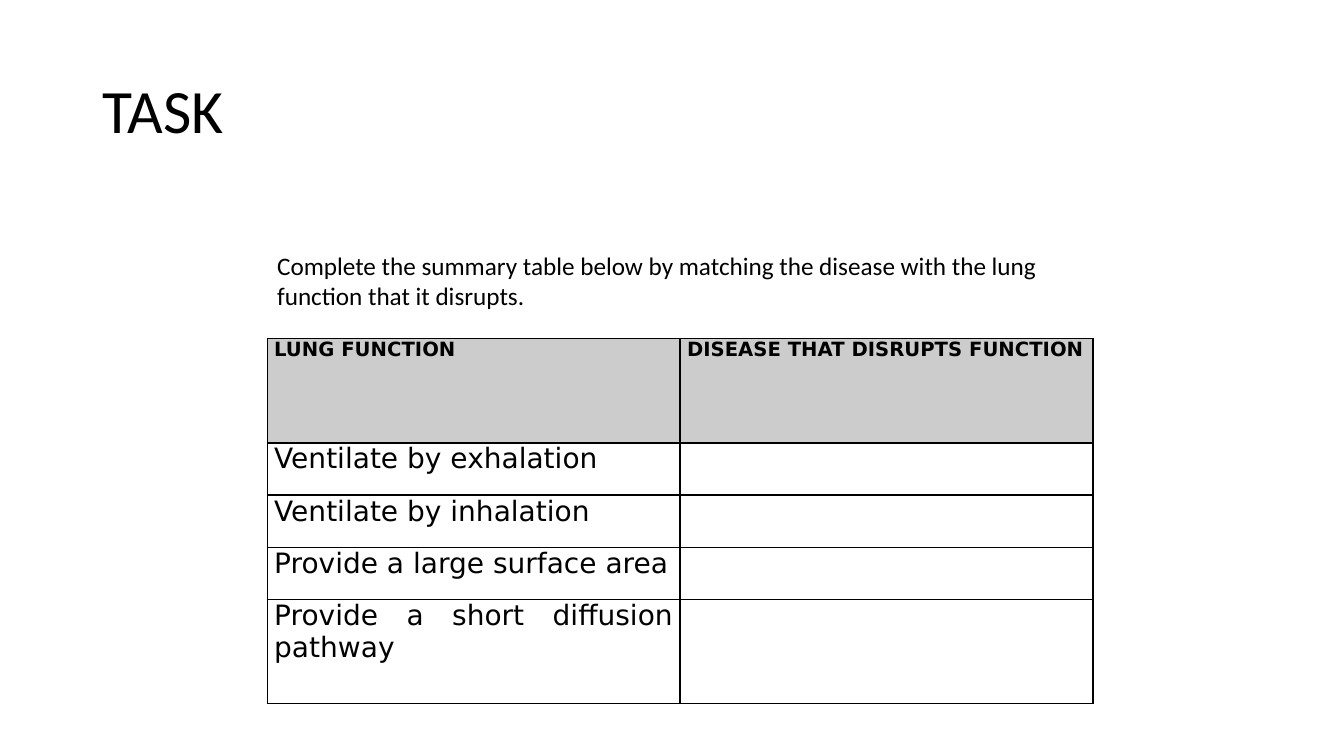
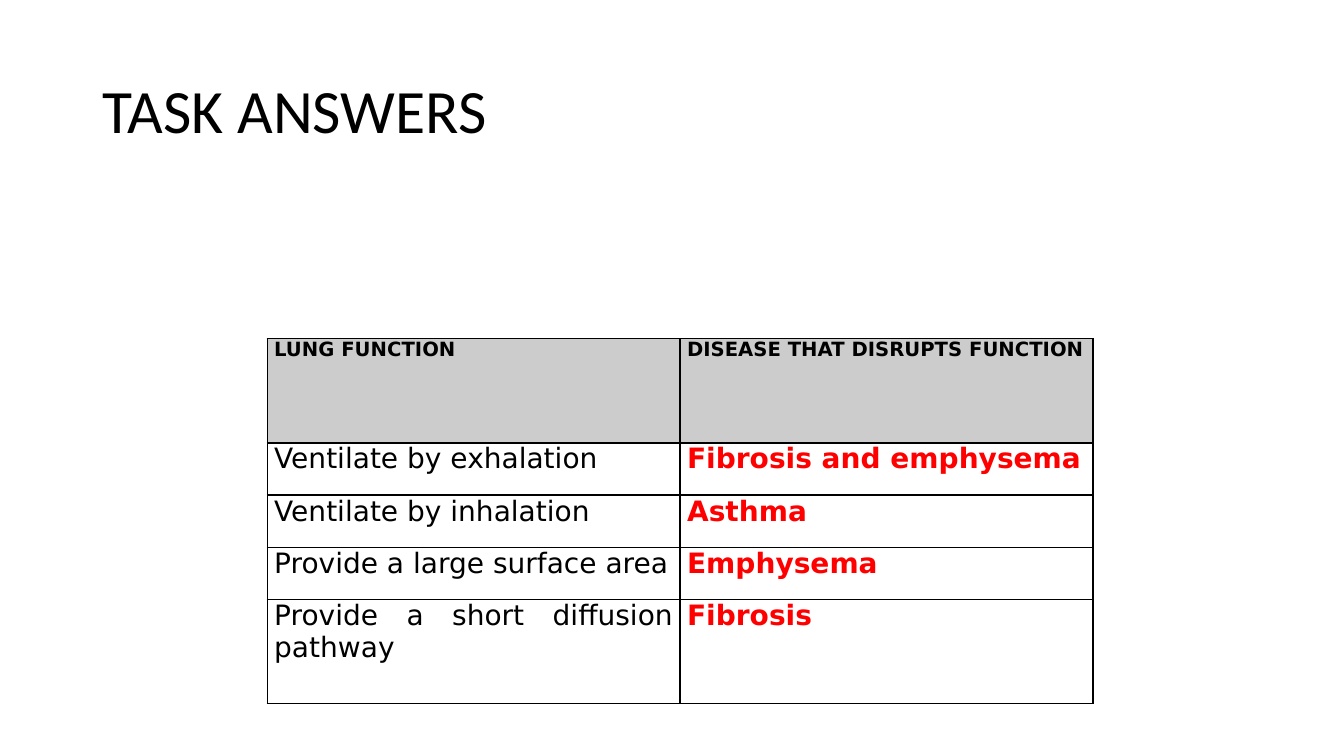
from lxml import etree
from pptx import Presentation
from pptx.dml.color import RGBColor
from pptx.enum.text import MSO_ANCHOR, PP_ALIGN
from pptx.oxml.ns import qn
from pptx.util import Inches, Pt

JUST, LEFT = PP_ALIGN.JUSTIFY, PP_ALIGN.LEFT
TOP, MIDDLE = MSO_ANCHOR.TOP, MSO_ANCHOR.MIDDLE

COLORS = {"ink": "000000", "head": "CCCCCC", "answer": "FF0000", "page": "FFFFFF"}
BODY, GRID = "Calibri", "DejaVu Sans"

# Boxes: left, top, width, height
TITLE = (0.92, 0.4, 11.5, 1.45)
PROMPT = (2.65, 2.43, 8.19, 0.71)
TABLE = (2.65, 3.36, 8.19, 3.62)
UNITS = (2, 1, 1, 1, 2)  # relative row heights

HEADS = ("LUNG FUNCTION", "DISEASE THAT DISRUPTS FUNCTION")
TASKS = (
    ("Ventilate by exhalation", "Fibrosis and emphysema"),
    ("Ventilate by inhalation", "Asthma"),
    ("Provide a large surface area", "Emphysema"),
    ("Provide a short diffusion pathway", "Fibrosis"),
)


def rgb(name):
    return RGBColor.from_string(COLORS[name])


def write(frame, text, size=18, font=BODY, color="ink", bold=False,
          align=LEFT, spacing=None):
    frame.word_wrap = True
    para = frame.paragraphs[0]
    para.alignment = align
    if spacing:
        para.line_spacing = spacing
    run = para.add_run()
    run.text = text
    run.font.size, run.font.name, run.font.bold = Pt(size), font, bold
    run.font.color.rgb = rgb(color)


def add_text(slide, box, text, anchor=TOP, **style):
    frame = slide.shapes.add_textbox(*map(Inches, box)).text_frame
    frame.vertical_anchor = anchor
    write(frame, text, **style)


def add_border(cell, width=1):
    props = cell._tc.get_or_add_tcPr()
    for side in ("lnL", "lnR", "lnT", "lnB"):
        line = etree.SubElement(props, qn("a:" + side), w=str(Pt(width)))
        fill = etree.SubElement(line, qn("a:solidFill"))
        etree.SubElement(fill, qn("a:srgbClr"), val=COLORS["ink"])


def set_cell(cell, text, fill, **style):
    cell.margin_left = cell.margin_right = Inches(0.07)
    cell.margin_top = cell.margin_bottom = 0
    add_border(cell)
    cell.fill.solid()
    cell.fill.fore_color.rgb = rgb(fill)
    if text:
        write(cell.text_frame, text, font=GRID, align=JUST, **style)


def add_grid(slide, box, solved):
    left, top, width, height = map(Inches, box)
    table = slide.shapes.add_table(len(UNITS), len(HEADS), left, top, width, height).table
    table.first_row = table.horz_banding = False
    for col in table.columns:
        col.width = width // len(HEADS)
    for row, unit in zip(table.rows, UNITS):
        row.height = height * unit // sum(UNITS)
    # Header row
    for c, head in enumerate(HEADS):
        set_cell(table.cell(0, c), head, "head", size=14, bold=True)
    # Functions and their diseases
    for r, (task, answer) in enumerate(TASKS, 1):
        set_cell(table.cell(r, 0), task, "page", size=20)
        set_cell(table.cell(r, 1), answer if solved else "", "page",
                 size=20, bold=True, color="answer")


def add_task(deck, title, prompt="", solved=False):
    slide = deck.slides.add_slide(deck.slide_layouts[6])
    add_text(slide, TITLE, title, anchor=MIDDLE, size=44, spacing=0.9)
    add_grid(slide, TABLE, solved)
    if prompt:
        add_text(slide, PROMPT, prompt)


def main():
    deck = Presentation()
    deck.slide_width, deck.slide_height = Inches(13.33), Inches(7.5)
    add_task(deck, "TASK", prompt="Complete the summary table below by matching "
             "the disease with the lung function that it disrupts.")
    add_task(deck, "TASK ANSWERS", solved=True)
    deck.save("out.pptx")


if __name__ == "__main__":
    main()
